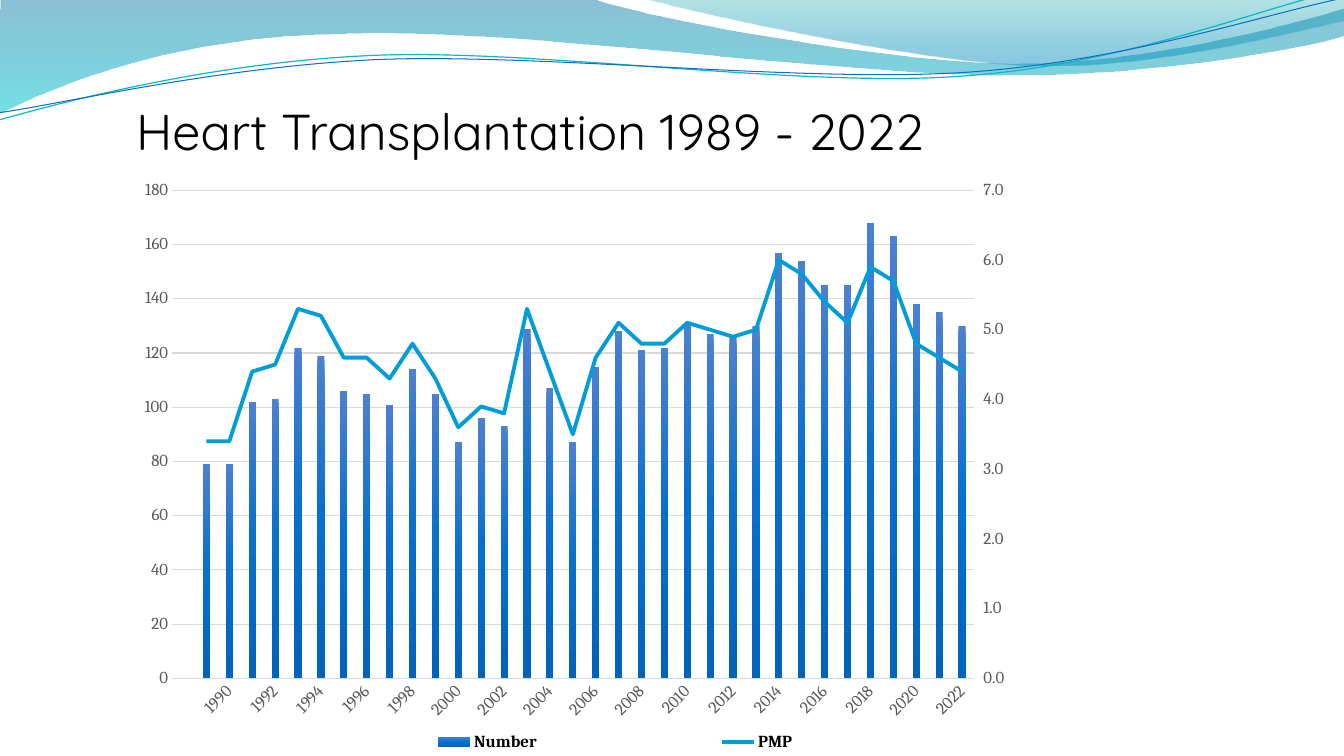
from lxml.etree import SubElement
from pptx import Presentation
from pptx.chart.axis import ValueAxis
from pptx.chart.data import CategoryChartData
from pptx.dml.color import RGBColor
from pptx.enum.chart import XL_CHART_TYPE, XL_LEGEND_POSITION, XL_MARKER_STYLE, XL_TICK_MARK
from pptx.enum.text import MSO_ANCHOR, PP_ALIGN
from pptx.oxml import parse_xml
from pptx.oxml.ns import nsdecls, qn
from pptx.util import Pt

HEADING_FONT = "Quicksand"
CHART_FONT = "Cambria"
YEARS = [""] + [str(year) for year in range(1989, 2023)]
NUMBERS = [None, 79, 79, 102, 103, 122, 119, 106, 105, 101, 114, 105, 87, 96, 93, 129, 107, 87,
           115, 128, 121, 122, 131, 127, 126, 130, 157, 154, 145, 145, 168, 163, 138, 135, 130]
RATES = [None, 3.4, 3.4, 4.4, 4.5, 5.3, 5.2, 4.6, 4.6, 4.3, 4.8, 4.3, 3.6, 3.9, 3.8, 5.3, 4.4, 3.5,
         4.6, 5.1, 4.8, 4.8, 5.1, 5, 4.9, 5, 6, 5.8, 5.4, 5.1, 5.9, 5.7, 4.8, 4.6, 4.4]
BAR_STOPS = [(0, "4C80D0", 100), (50, "066FCF", 100), (100, "0063BD", 100)]

FILLED_WAVES = [
    ([(0, 0), (423, -0.7), (456.5, 12.2, 636.5, 45.4, 727.9, 45.4),
      (818.6, 45.4, 919.4, 18.7, 960, 6.5), (960.5, 25.9),
      (943.9, 31.7, 834.5, 54.7, 715.7, 54), (596.9, 54, 366.5, 20.2, 247, 24.5),
      (123.8, 25.9, 43.9, 59.8, -1.4, 81.4)],
     [(0, "0074A1", 45), (100, "00C6CF", 55)]),
    ([(459.4, -0.7), (488.9, 7.9, 654.5, 44.6, 738, 46.8),
      (820.8, 49.7, 923, 23, 960, 15.1), (960, 0)],
     [(0, "00A1A9", 30), (80, "008BBF", 45)]),
]
LINE_WAVES = [
    ([(-2.3, 63.1), (44.4, 52.3, 151.4, 29.2, 266, 29.6),
      (379.8, 29.9, 567, 66.8, 682.5, 64.3), (798.5, 62.6, 901.9, 25.7, 959.4, 15.5)],
     "0AB8BF", 0.85),
    ([(-2, 57.9), (43.6, 53.7, 157.2, 32.3, 271.6, 32.7),
      (386.9, 33.8, 572.2, 63.4, 687, 61.6), (801.6, 59.8, 904.6, 30, 961.6, 21.2)],
     "0F6FC6", 0.75),
]


def color(value):
    """Return the colour for a hex string."""
    return RGBColor.from_string(value)


def set_font(font, name, size, value, bold=False):
    """Set name, size, colour and weight of a font."""
    font.name, font.size, font.bold = name, Pt(size), bold
    font.color.rgb = color(value)


def set_gradient(fill, properties, stops):
    """Fill downwards with stops of position, colour and opacity in percent."""
    fill.solid()
    stop_xml = "".join(
        f'<a:gs pos="{position * 1000}"><a:srgbClr val="{value}">'
        f'<a:alpha val="{opacity * 1000}"/></a:srgbClr></a:gs>'
        for position, value, opacity in stops)
    gradient = parse_xml(f'<a:gradFill {nsdecls("a")} rotWithShape="1"><a:gsLst>{stop_xml}'
                         '</a:gsLst><a:lin ang="5400000" scaled="0"/></a:gradFill>')
    properties.replace(properties.find(qn("a:solidFill")), gradient)


def add_wave(slide, left, top, segments, close):
    """Draw one wave of straight and cubic segments from the given corner."""
    points = [(Pt(left + x), Pt(top + y)) for segment in segments
              for x, y in zip(segment[::2], segment[1::2])]
    builder = slide.shapes.build_freeform(*points[0])
    builder.add_line_segments(points[1:], close=close)
    shape = builder.convert_to_shape()
    shape.shadow.inherit = False
    lines = iter(shape.element.findall(".//" + qn("a:lnTo")))
    for segment in segments[1:]:
        group = [next(lines) for _ in segment[::2]]
        if len(group) == 3:
            curve = parse_xml(f'<a:cubicBezTo {nsdecls("a")}/>')
            group[0].addprevious(curve)
            for line in group:
                curve.append(line[0])
                line.getparent().remove(line)
    return shape


def add_waves(slide, left, top):
    """Draw the wave band along the top of the slide."""
    for segments, stops in FILLED_WAVES:
        shape = add_wave(slide, left, top, segments, True)
        set_gradient(shape.fill, shape.element.spPr, stops)
        shape.line.fill.background()
    for segments, value, width in LINE_WAVES:
        shape = add_wave(slide, left, top, segments, False)
        shape.rotation = 357.3
        shape.fill.background()
        shape.line.color.rgb = color(value)
        shape.line.width = Pt(width)


def add_title(slide, left, top, width, height):
    """Place the slide title in its box."""
    title = slide.shapes.title
    title.left, title.top, title.width, title.height = map(Pt, (left, top, width, height))
    frame = title.text_frame
    frame.text = "Heart Transplantation 1989 - 2022"
    frame.word_wrap = True
    frame.vertical_anchor = MSO_ANCHOR.TOP
    paragraph = frame.paragraphs[0]
    paragraph.alignment = PP_ALIGN.LEFT
    paragraph.line_spacing = 0.8
    set_font(paragraph.font, HEADING_FONT, 36, "000000")


def set_layout(parent, index, inner, box, chart_size):
    """Give a chart part a fixed box, in points from the chart corner."""
    for previous in parent.findall(qn("c:layout")):
        parent.remove(previous)
    layout = parse_xml(f'<c:layout {nsdecls("c")}><c:manualLayout/></c:layout>')
    settings = {"layoutTarget": "inner"} if inner else {}
    settings.update(xMode="edge", yMode="edge")
    settings.update(zip("xywh", (length / total for length, total in zip(box, chart_size * 2))))
    for name, value in settings.items():
        SubElement(layout[0], qn(f"c:{name}")).set("val", str(value))
    parent.insert(index, layout)


def format_axis(axis, tick_mark):
    """Style the labels and ticks of an axis and hide its line."""
    set_font(axis.tick_labels.font, CHART_FONT, 12, "595959")
    axis.major_tick_mark = tick_mark
    axis.minor_tick_mark = XL_TICK_MARK.NONE
    axis.format.line.fill.background()


def move_to_right_axis(plot_area):
    """Turn the second series into a line on a right axis and return that axis."""
    bars = plot_area.find(qn("c:barChart"))
    series = bars.findall(qn("c:ser"))[1]
    inverted = series.find(qn("c:invertIfNegative"))
    if inverted is not None:
        series.remove(inverted)
    lines = parse_xml(
        f'<c:lineChart {nsdecls("c")}><c:grouping val="standard"/><c:varyColors val="0"/>'
        '<c:marker val="1"/><c:axId val="5001"/><c:axId val="5002"/></c:lineChart>')
    lines.insert(2, series)
    bars.addnext(lines)
    axis_xml = ('<c:{0} {1}><c:axId val="{2}"/><c:scaling><c:orientation val="minMax"/></c:scaling>'
                '<c:delete val="{3}"/><c:axPos val="{4}"/><c:crossAx val="{5}"/>'
                '<c:crosses val="{6}"/></c:{0}>')
    value_axis = parse_xml(axis_xml.format("valAx", nsdecls("c"), 5002, 0, "r", 5001, "max"))
    hidden_axis = parse_xml(axis_xml.format("catAx", nsdecls("c"), 5001, 1, "b", 5002, "autoZero"))
    plot_area.find(qn("c:valAx")).addnext(value_axis)
    value_axis.addnext(hidden_axis)
    return ValueAxis(value_axis)


def add_transplant_chart(slide, left, top, width, height):
    """Draw yearly numbers as columns and the rate as a line."""
    data = CategoryChartData()
    data.categories = YEARS
    data.add_series("Number", NUMBERS)
    data.add_series("PMP", RATES, number_format="0.0")
    chart = slide.shapes.add_chart(XL_CHART_TYPE.COLUMN_CLUSTERED,
                                   *map(Pt, (left, top, width, height)), data).chart
    set_font(chart.font, CHART_FONT, 10, "000000")
    chart.has_title = False
    years, numbers = chart.category_axis, chart.value_axis
    plot_area = chart.element.find(".//" + qn("c:plotArea"))
    right_axis = move_to_right_axis(plot_area)
    set_layout(plot_area, 0, True, (32.9, 16, 572.5, 348.6), (width, height))

    column_plot, line_plot = chart.plots
    column_plot.gap_width = 219
    column_plot.vary_by_categories = False
    columns, rate = column_plot.series[0], line_plot.series[0]
    set_gradient(columns.format.fill, columns._element.spPr, BAR_STOPS)
    rate.smooth = False
    rate.marker.style = XL_MARKER_STYLE.NONE
    rate.format.line.color.rgb = color("009DD9")
    rate.format.line.width = Pt(2.75)

    for axis, tick_mark in ((years, XL_TICK_MARK.NONE), (numbers, XL_TICK_MARK.NONE),
                            (right_axis, XL_TICK_MARK.OUTSIDE)):
        format_axis(axis, tick_mark)
    years.format.line.color.rgb = color("D9D9D9")
    years.format.line.width = Pt(1)
    years._element.find(qn("c:txPr")).find(qn("a:bodyPr")).set("rot", "-2700000")
    skip = parse_xml(f'<c:tickLblSkip {nsdecls("c")} val="2"/>')
    years._element.find(qn("c:noMultiLvlLbl")).addprevious(skip)
    for axis, top_value, step, number_format in ((numbers, 180, 20, "0"), (right_axis, 7, 1, "0.0")):
        axis.minimum_scale, axis.maximum_scale, axis.major_unit = 0, top_value, step
        axis.tick_labels.number_format = number_format
        axis.tick_labels.number_format_is_linked = False
    numbers.major_gridlines.format.line.color.rgb = color("D9D9D9")
    numbers.major_gridlines.format.line.width = Pt(0.75)

    chart.has_legend = True
    legend = chart.legend
    legend.position = XL_LEGEND_POSITION.BOTTOM
    legend.include_in_layout = False
    set_font(legend.font, CHART_FONT, 12, "000000", bold=True)
    set_layout(legend._element, 1, False, (94.6, 399.3, 510, 21.4), (width, height))


def main():
    """Build and save the presentation."""
    presentation = Presentation()
    presentation.slide_width, presentation.slide_height = Pt(960), Pt(540)
    slide = presentation.slides.add_slide(presentation.slide_layouts[5])
    add_waves(slide, 0, 0)
    add_title(slide, 90, 76.3, 648, 44.6)
    add_transplant_chart(slide, 90, 120, 640, 427)
    presentation.save("out.pptx")


if __name__ == "__main__":
    main()
